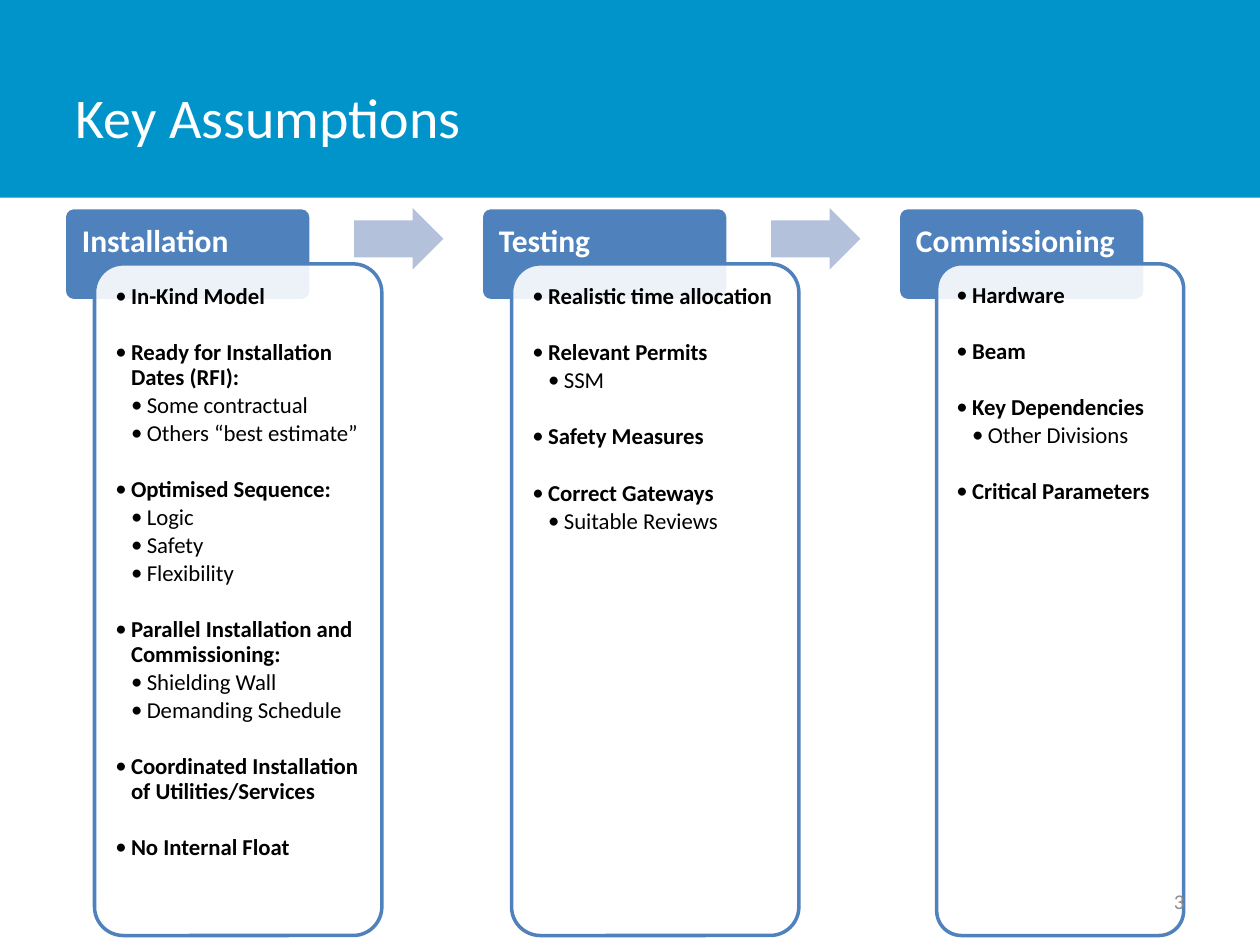
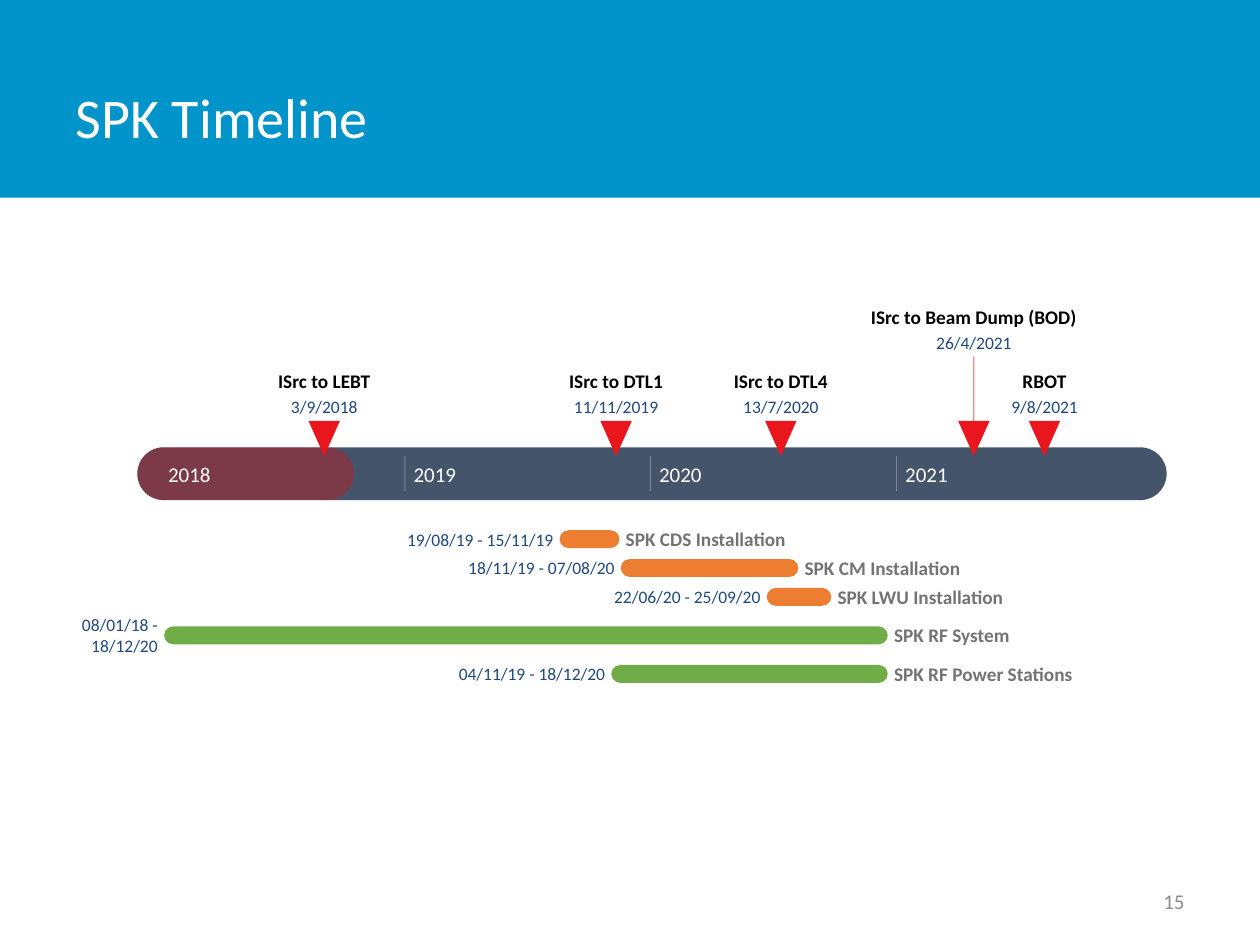
from lxml.etree import SubElement
from pptx import Presentation
from pptx.dml.color import RGBColor
from pptx.enum.shapes import MSO_CONNECTOR, MSO_SHAPE
from pptx.enum.text import MSO_ANCHOR, PP_ALIGN
from pptx.oxml.ns import qn
from pptx.util import Pt

FONT = "Calibri"
COLORS = {
    "band": "0094CA", "white": "FFFFFF", "black": "000000", "page": "8C8C8C",
    "header": "4F81BD", "arrow": "B3C1DB", "axis": "44546A", "elapsed": "FF0000",
    "milestone": "EA161E", "date": "1F497E", "task": "737373",
    "installation": "ED7D31", "rf": "70AD47",
}

# Content: heading, body offset, body width, then (point, sub-points)
PHASES = [
    ("Installation", 17.3, 164.2, [
        ("In-Kind Model", []),
        ("Ready for Installation Dates (RFI):", ["Some contractual", "Others “best estimate”"]),
        ("Optimised Sequence:", ["Logic", "Safety", "Flexibility"]),
        ("Parallel Installation and Commissioning:", ["Shielding Wall", "Demanding Schedule"]),
        ("Coordinated Installation of Utilities/Services", []),
        ("No Internal Float", []),
    ]),
    ("Testing", 17.3, 164.2, [
        ("Realistic time allocation", []),
        ("Relevant Permits", ["SSM"]),
        ("Safety Measures", []),
        ("Correct Gateways", ["Suitable Reviews"]),
    ]),
    ("Commissioning", 22, 141.1, [
        ("Hardware", []),
        ("Beam", []),
        ("Key Dependencies", ["Other Divisions"]),
        ("Critical Parameters", []),
    ]),
]

YEARS = [2018, 2019, 2020, 2021]
# Name, date, height of the label above the normal row
MILESTONES = [
    ("ISrc to LEBT", "3/9/2018", 0),
    ("ISrc to DTL1", "11/11/2019", 0),
    ("ISrc to DTL4", "13/7/2020", 0),
    ("ISrc to Beam Dump (BOD)", "26/4/2021", 36.7),
    ("RBOT", "9/8/2021", 0),
]
# Colour, row pitch, tasks with start and end
TASK_GROUPS = [
    ("installation", 16.5, [
        ("SPK CDS Installation", "19/08/19", "15/11/19"),
        ("SPK CM Installation", "18/11/19", "07/08/20"),
        ("SPK LWU Installation", "22/06/20", "25/09/20"),
    ]),
    ("rf", 22, [
        ("SPK RF System", "08/01/18", "18/12/20"),
        ("SPK RF Power Stations", "04/11/19", "18/12/20"),
    ]),
]


# Shared drawing helpers
def rgb(color):
    return RGBColor.from_string(COLORS[color])


def set_opacity(shape, percent):
    first_color = next(shape.element.iter(qn("a:srgbClr")))
    SubElement(first_color, qn("a:alpha")).set("val", str(percent * 1000))


def style_runs(paragraph, size, color, bold=False):
    for run in paragraph.runs:
        run.font.name = FONT
        run.font.size = Pt(size)
        run.font.bold = bold
        run.font.color.rgb = rgb(color)


def set_insets(frame, left, top, right, bottom):
    frame.margin_left, frame.margin_top = Pt(left), Pt(top)
    frame.margin_right, frame.margin_bottom = Pt(right), Pt(bottom)


def add_block(slide, kind, left, top, width, height, fill, line=None, corner=None):
    block = slide.shapes.add_shape(kind, Pt(left), Pt(top), Pt(width), Pt(height))
    block.shadow.inherit = False
    block.fill.solid()
    block.fill.fore_color.rgb = rgb(fill)
    if line:
        block.line.color.rgb = rgb(line)
        block.line.width = Pt(2)
    else:
        block.line.fill.background()
    if corner is not None:
        block.adjustments[0] = corner
    return block


def add_label(slide, text, left, top, width, height, size, color,
              bold=False, align=PP_ALIGN.LEFT, inset=0):
    label = slide.shapes.add_textbox(Pt(left), Pt(top), Pt(width), Pt(height))
    frame = label.text_frame
    frame.word_wrap = True
    frame.vertical_anchor = MSO_ANCHOR.MIDDLE
    set_insets(frame, inset, inset / 2, inset, inset / 2)
    frame.text = text
    frame.paragraphs[0].alignment = align
    style_runs(frame.paragraphs[0], size, color, bold)


def add_rule(slide, x, top, bottom, color, width, opacity):
    rule = slide.shapes.add_connector(MSO_CONNECTOR.STRAIGHT, Pt(x), Pt(top), Pt(x), Pt(bottom))
    rule.line.color.rgb = rgb(color)
    rule.line.width = Pt(width)
    set_opacity(rule, opacity)
    SubElement(rule.element.spPr, qn("a:effectLst"))


def add_titled_slide(deck, title):
    slide = deck.slides.add_slide(deck.slide_layouts[5])
    heading = slide.shapes.title
    heading.left, heading.top, heading.width, heading.height = Pt(36), Pt(21.6), Pt(562.3), Pt(90)
    heading.text_frame.text = title
    heading.text_frame.vertical_anchor = MSO_ANCHOR.MIDDLE
    heading.text_frame.paragraphs[0].alignment = PP_ALIGN.LEFT
    style_runs(heading.text_frame.paragraphs[0], 32, "white")
    return slide


def add_page_number(slide, page):
    add_label(slide, page, 516.2, 500.4, 167.8, 28.8, 12, "page",
              align=PP_ALIGN.RIGHT, inset=7.2)


def add_band_to_layout(slide):
    band = add_block(slide, MSO_SHAPE.RECTANGLE, 0, 0, 720, 113, "band")
    slide.slide_layout.shapes.element.insert(2, band.element)


# Phase columns
def add_point(frame, text, level, first):
    paragraph = frame.paragraphs[0] if first else frame.add_paragraph()
    paragraph.text = text
    paragraph.alignment = PP_ALIGN.LEFT
    paragraph.line_spacing = 0.9
    paragraph.space_after = Pt(1.95)
    if level == 1 and not first:
        paragraph.space_before = Pt(16.1)
    properties = paragraph._p.get_or_add_pPr()
    properties.set("marL", str(Pt(9 * level)))
    properties.set("indent", str(-Pt(9)))
    SubElement(properties, qn("a:buFont")).set("typeface", FONT)
    SubElement(properties, qn("a:buChar")).set("char", "•")
    style_runs(paragraph, 13, "black", bold=level == 1)


def add_phase(slide, left, heading, offset, width, points):
    header = add_block(slide, MSO_SHAPE.ROUNDED_RECTANGLE, left, 118.6, 141.1, 53.3,
                       "header", "white", 0.1)
    frame = header.text_frame
    frame.word_wrap = True
    frame.vertical_anchor = MSO_ANCHOR.TOP
    set_insets(frame, 8.6, 8.6, 8.6, 5)
    frame.text = heading
    frame.paragraphs[0].alignment = PP_ALIGN.LEFT
    frame.paragraphs[0].line_spacing = 0.9
    style_runs(frame.paragraphs[0], 18, "white", bold=True)

    body = add_block(slide, MSO_SHAPE.ROUNDED_RECTANGLE, left + offset, 150.8, width, 383.8,
                     "white", "header", 0.1)
    set_opacity(body, 90)
    frame = body.text_frame
    frame.word_wrap = True
    frame.vertical_anchor = MSO_ANCHOR.TOP
    set_insets(frame, 7.2, 7.2, 7.2, 7.2)
    for index, (point, details) in enumerate(points):
        add_point(frame, point, 1, index == 0)
        for detail in details:
            add_point(frame, detail, 2, False)


def build_assumptions(slide):
    for index, phase in enumerate(PHASES):
        left = 36.7 + 238.3 * index
        add_phase(slide, left, *phase)
        if index < len(PHASES) - 1:
            arrow = add_block(slide, MSO_SHAPE.RIGHT_ARROW, left + 165.6, 118.8, 51.1, 35.3, "arrow")
            arrow.adjustments[0] = 0.6


# Timeline: dates become positions on the axis
AXIS_LEFT, AXIS_TOP, AXIS_WIDTH, AXIS_HEIGHT = 78.5, 255.6, 588.2, 30.2
FIRST_DAY_X, DAY_WIDTH = 91.1, 0.3843
MONTH_DAYS = [31, 28, 31, 30, 31, 30, 31, 31, 30, 31, 30, 31]


def date_x(date):
    day, month, year = (int(part) for part in date.split("/"))
    year %= 100
    leap_days = sum(y % 4 == 0 for y in range(18, year)) + (year % 4 == 0 and month > 2)
    days = 365 * (year - 18) + sum(MONTH_DAYS[:month - 1]) + leap_days + day - 1
    return FIRST_DAY_X + DAY_WIDTH * days


def add_axis(slide):
    for width, color, opacity in ((AXIS_WIDTH, "axis", 100), (123.8, "elapsed", 30)):
        bar = add_block(slide, MSO_SHAPE.ROUNDED_RECTANGLE, AXIS_LEFT, AXIS_TOP, width,
                        AXIS_HEIGHT, color, corner=0.5)
        if opacity < 100:
            set_opacity(bar, opacity)
    for year in YEARS:
        x = date_x(f"1/1/{year}")
        if year != YEARS[0]:
            add_rule(slide, x, AXIS_TOP + 5, AXIS_TOP + AXIS_HEIGHT - 5, "white", 0.5, 30)
        add_label(slide, str(year), x + 5, AXIS_TOP + 7.9, 30, 14.4, 12, "white")


def add_milestone(slide, name, date, lift):
    x = date_x(date)
    if lift:
        add_rule(slide, x, 240.5 - lift, 250.6, "milestone", 0.75, 50)
    for text, top, height, size, color, bold in (
            (name, 211, 13.7, 11, "black", True),
            (date, 226.1, 12.2, 10, "date", False)):
        width = 5 * len(text) + 14
        add_label(slide, text, x - width / 2, top - lift, width, height, size, color,
                  bold, PP_ALIGN.CENTER)
    marker = add_block(slide, MSO_SHAPE.ISOSCELES_TRIANGLE, x - 9, 240.5, 18, 20.2, "milestone")
    marker.element.spPr.xfrm.set("flipV", "1")


def add_task(slide, name, start, end, top, color):
    left, right = date_x(start), date_x(end) + DAY_WIDTH
    middle = top + 5.1
    add_block(slide, MSO_SHAPE.ROUNDED_RECTANGLE, left, top, right - left, 10.2, color, corner=0.5)
    # Dates stay inside the left margin and wrap there
    dates_right = left - 3.7
    dates_left = max(31.7, dates_right - 90)
    height = 24.5 if dates_right - dates_left < 84 else 12.2
    add_label(slide, f"{start} - {end}", dates_left, middle - height / 2,
              dates_right - dates_left, height, 10, "date", align=PP_ALIGN.RIGHT)
    add_label(slide, name, right + 3.6, middle - 7, 5 * len(name) + 14, 13.7, 11, "task", True)


def build_timeline(slide):
    add_axis(slide)
    for milestone in MILESTONES:
        add_milestone(slide, *milestone)
    top = 286.5
    for color, pitch, tasks in TASK_GROUPS:
        for task in tasks:
            top += pitch
            add_task(slide, *task, top, color)


def main():
    deck = Presentation()
    deck.slide_width, deck.slide_height = Pt(720), Pt(540)
    assumptions = add_titled_slide(deck, "Key Assumptions")
    add_band_to_layout(assumptions)
    build_assumptions(assumptions)
    add_page_number(assumptions, "3")
    timeline = add_titled_slide(deck, "SPK Timeline")
    build_timeline(timeline)
    add_page_number(timeline, "15")
    deck.save("out.pptx")


if __name__ == "__main__":
    main()
